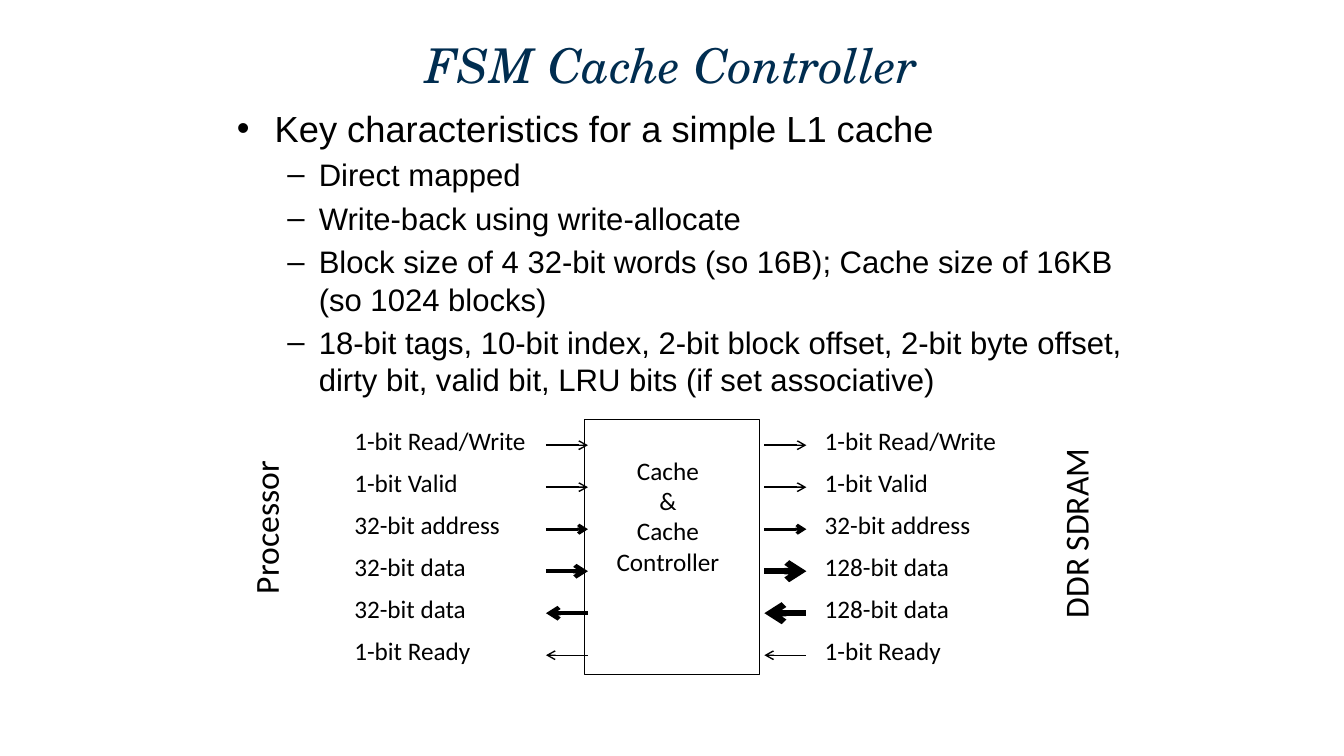
"""Build the FSM cache controller slide on a grid of 160 columns by 90 rows."""
from dataclasses import dataclass
from lxml import etree
from pptx import Presentation
from pptx import util as u
from pptx.dml.color import RGBColor
from pptx.enum import shapes, text
from pptx.oxml import ns

CELL = u.Inches(1 / 12)
COLUMNS, ROWS = 160, 90
FIRST_ROW, ROW_STEP = 50, 5
LABEL_WIDTH, LABEL_HEIGHT = 24, 4.8
ARROW_WIDTH, ARROW_DROP = 5, 3


@dataclass(frozen=True)
class Theme:
    """Colours, fonts and type sizes of the slide."""
    ink: RGBColor = RGBColor(0, 0, 0)
    navy: RGBColor = RGBColor(0x00, 0x2D, 0x50)
    paper: RGBColor = RGBColor(255, 255, 255)
    title_font: str = "TeX Gyre Schola"
    body_font: str = "Arial"
    label_font: str = "Calibri"
    title: float = 34.2
    point: float = 25.9
    subpoint: float = 22.2
    label: float = 18
    side: float = 24
    outline: float = 0.75


@dataclass(frozen=True)
class Area:
    """A rectangle in grid cells."""
    left: float
    top: float
    width: float
    height: float


@dataclass(frozen=True)
class Signal:
    """One labelled signal with its arrow weight and direction."""
    name: str
    weight: float
    forward: bool = True


@dataclass(frozen=True)
class Bus:
    """The signals on one side of the controller."""
    label_column: float
    arrow_column: float
    signals: tuple[Signal, ...]


@dataclass(frozen=True)
class SideName:
    """A vertical name centred on a grid point."""
    name: str
    column: float
    row: float


def bus_signals(data_bits: int, data_weight: float) -> tuple[Signal, ...]:
    """List the six signals of a bus with the given data width."""
    data = f"{data_bits}-bit data"
    return (Signal("1-bit Read/Write", 1), Signal("1-bit Valid", 1),
            Signal("32-bit address", 2.25), Signal(data, data_weight),
            Signal(data, data_weight, False), Signal("1-bit Ready", 1, False))


THEME = Theme()
TITLE_AREA = Area(8, 3.4, 144, 8.6)
BODY_AREA = Area(27, 12, 109, 32)
CONTROLLER_AREA = Area(69.6, 50, 20.8, 30.3)
POINTS = (
    (0, "Key characteristics for a simple L1 cache"),
    (1, "Direct mapped"),
    (1, "Write-back using write-allocate"),
    (1, "Block size of 4 32-bit words (so 16B); Cache size of 16KB (so 1024 blocks)"),
    (1, "18-bit tags, 10-bit index, 2-bit block offset, 2-bit byte offset, "
        "dirty bit, valid bit, LRU bits (if set associative)"),
)
BUSES = (Bus(41, 65, bus_signals(32, 3)), Bus(97, 91, bus_signals(128, 4.5)))
SIDES = (SideName("Processor", 31.6, 62.8), SideName("DDR SDRAM", 128, 63.5))


def cells(*counts: float) -> list[int]:
    """Turn grid counts into lengths."""
    return [round(count * CELL) for count in counts]


def bounds(area: Area) -> list[int]:
    """Give left, top, width and height of an area as lengths."""
    return cells(area.left, area.top, area.width, area.height)


def style(para, font: str, size: float, colour: RGBColor, italic: bool = False) -> None:
    """Format every run of a paragraph."""
    for span in para.runs:
        span.font.name, span.font.size = font, u.Pt(size)
        span.font.color.rgb, span.font.italic = colour, italic


def place(box, area: Area) -> None:
    """Move a placeholder to an area and fix its text size."""
    box.left, box.top, box.width, box.height = bounds(area)
    box.text_frame.auto_size = text.MSO_AUTO_SIZE.NONE


def fill_title(page) -> None:
    """Write the slide title."""
    box = page.shapes.title
    place(box, TITLE_AREA)
    box.text_frame.text = "FSM Cache Controller"
    style(box.text_frame.paragraphs[0], THEME.title_font, THEME.title, THEME.navy, True)


def fill_body(page) -> None:
    """Write the bulleted list."""
    box = page.placeholders[1]
    place(box, BODY_AREA)
    box.text_frame.text = "\n".join(words for _, words in POINTS)
    for para, (level, _) in zip(box.text_frame.paragraphs, POINTS):
        para.level = level
        style(para, THEME.body_font, THEME.subpoint if level else THEME.point, THEME.ink)
    box.text_frame.paragraphs[0].space_before = u.Pt(0)


def add_label(page, words: str, area: Area, size: float):
    """Add a text box with one line of label text."""
    box = page.shapes.add_textbox(*bounds(area))
    box.text_frame.word_wrap = True
    box.text_frame.text = words
    style(box.text_frame.paragraphs[0], THEME.label_font, size, THEME.ink)
    return box


def add_arrow(page, column: float, row: float, signal: Signal) -> None:
    """Add the horizontal arrow of a signal."""
    ends = cells(column, row, column + ARROW_WIDTH, row)
    arrow = page.shapes.add_connector(shapes.MSO_CONNECTOR.STRAIGHT, *ends)
    arrow.line.color.rgb, arrow.line.width = THEME.ink, u.Pt(signal.weight)
    end = "a:tailEnd" if signal.forward else "a:headEnd"
    etree.SubElement(arrow.line._get_or_add_ln(), ns.qn(end), type="arrow")
    etree.SubElement(arrow._element.spPr, ns.qn("a:effectLst"))


def add_bus(page, bus: Bus) -> None:
    """Add the labels and arrows of a bus, one per row."""
    for index, signal in enumerate(bus.signals):
        row = FIRST_ROW + index * ROW_STEP
        area = Area(bus.label_column, row, LABEL_WIDTH, LABEL_HEIGHT)
        add_label(page, signal.name, area, THEME.label)
        add_arrow(page, bus.arrow_column, row + ARROW_DROP, signal)


def add_side(page, side: SideName) -> None:
    """Add a name that reads from bottom to top."""
    width, height = LABEL_WIDTH, 6
    area = Area(side.column - width / 2, side.row - height / 2, width, height)
    box = add_label(page, side.name, area, THEME.side)
    box.rotation = 270
    box.text_frame.paragraphs[0].alignment = text.PP_ALIGN.CENTER


def add_controller(page) -> None:
    """Add the central controller block."""
    box = page.shapes.add_shape(shapes.MSO_SHAPE.RECTANGLE, *bounds(CONTROLLER_AREA))
    box.shadow.inherit = False
    box.fill.solid()
    box.fill.fore_color.rgb = THEME.paper
    box.line.color.rgb, box.line.width = THEME.ink, u.Pt(THEME.outline)
    frame = box.text_frame
    frame.vertical_anchor = text.MSO_ANCHOR.TOP
    frame.margin_top, frame.margin_right = u.Inches(0.35), u.Inches(0.18)
    frame.text = "Cache\n&\nCache\nController"
    for para in frame.paragraphs:
        para.alignment = text.PP_ALIGN.CENTER
        style(para, THEME.label_font, THEME.label, THEME.ink)


def main() -> None:
    """Build and save the deck."""
    deck = Presentation()
    deck.slide_width, deck.slide_height = cells(COLUMNS, ROWS)
    page = deck.slides.add_slide(deck.slide_layouts[1])
    fill_title(page)
    fill_body(page)
    add_controller(page)
    for bus in BUSES:
        add_bus(page, bus)
    for side in SIDES:
        add_side(page, side)
    deck.save("out.pptx")


if __name__ == "__main__":
    main()
